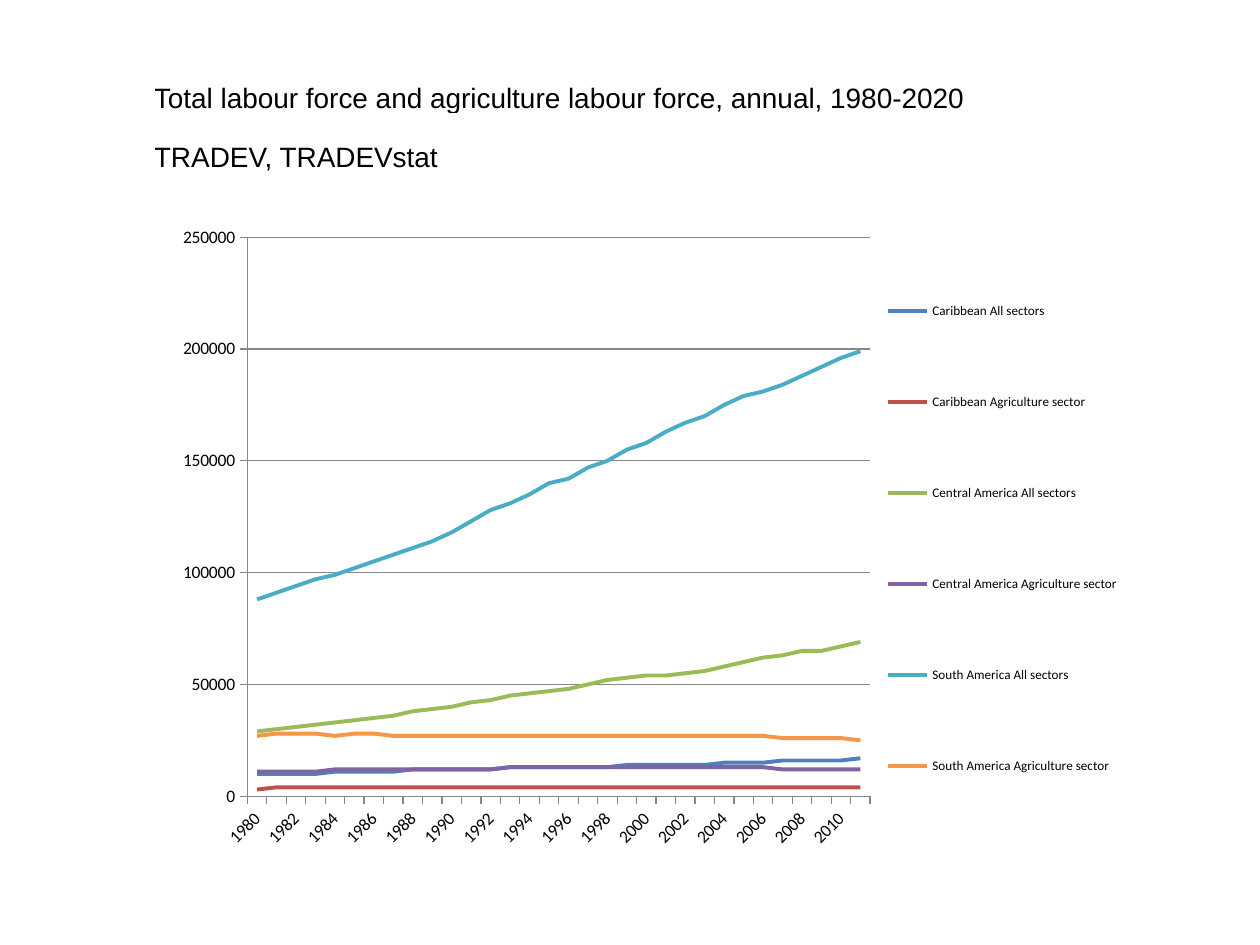
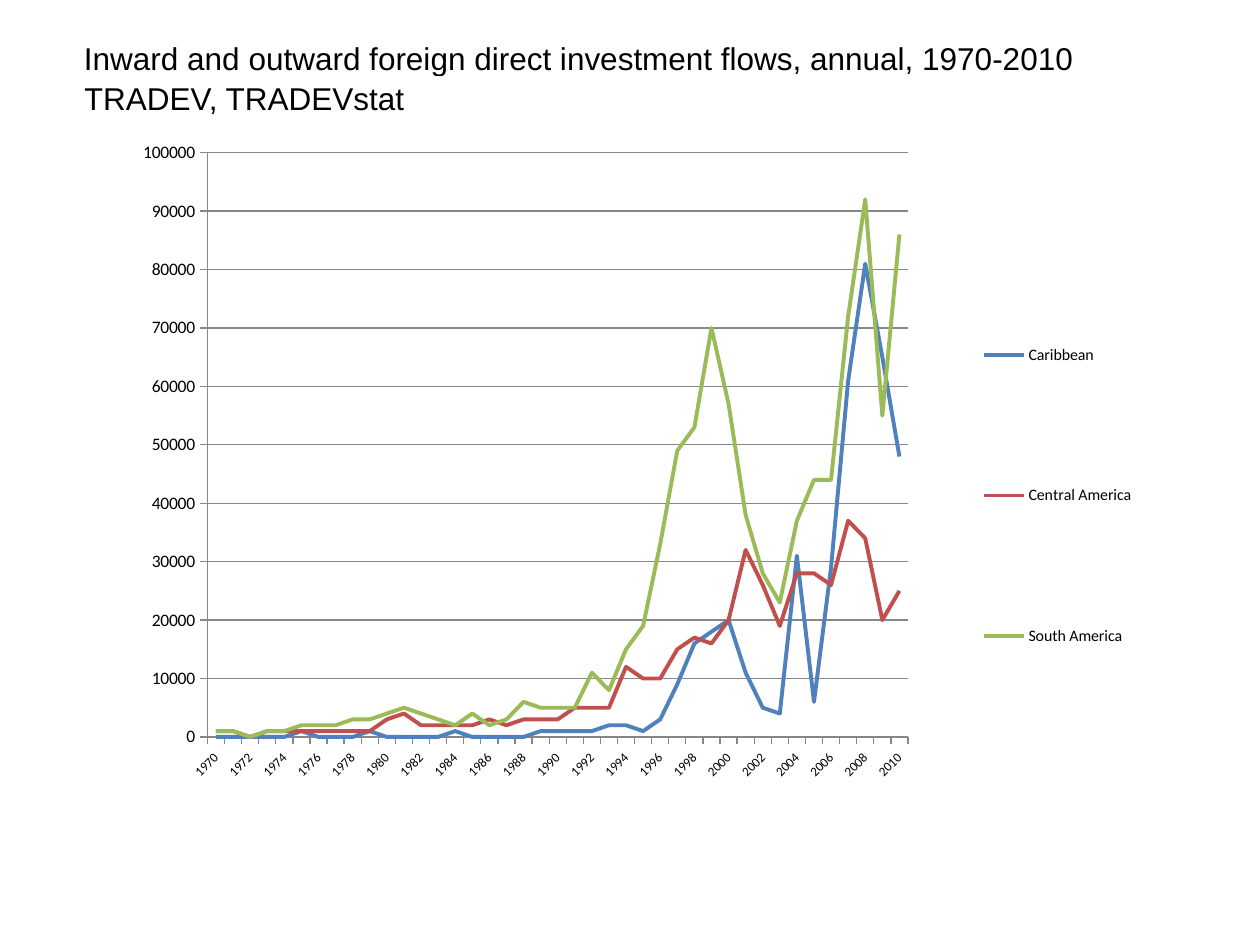
from dataclasses import dataclass

import lxml.etree
import pptx
import pptx.chart.data
import pptx.dml.color
import pptx.enum.chart
import pptx.enum.text
import pptx.oxml
import pptx.oxml.ns
import pptx.util

PX = 914400 / 126
BLANK_LAYOUT = 6
SOURCE_LINE = "TRADEV, TRADEVstat"


def rgb(code):
    return pptx.dml.color.RGBColor.from_string(code)


@dataclass(frozen=True)
class Theme:
    ink: str = "000000"
    rule: str = "878787"
    regions: tuple = ("4F81BD", "C0504D", "9BBB59", "8064A2", "4BACC6", "F79646")
    heading_font: str = "Arial"
    chart_font: str = "Calibri"
    axis_size: float = 10
    small_size: float = 7.5
    legend_size: float = 9.1
    labour_heading: float = 16
    investment_heading: float = 18
    trend_width: float = 2.25
    rule_width: float = 0.75


THEME = Theme()

LABOUR = {
    "Caribbean All sectors": [
        10, 10, 10, 10, 11, 11, 11, 11, 12, 12, 12, 12, 12, 13, 13, 13,
        13, 13, 13, 14, 14, 14, 14, 14, 15, 15, 15, 16, 16, 16, 16, 17],
    "Caribbean Agriculture sector": [3] + [4] * 31,
    "Central America All sectors": [
        29, 30, 31, 32, 33, 34, 35, 36, 38, 39, 40, 42, 43, 45, 46, 47,
        48, 50, 52, 53, 54, 54, 55, 56, 58, 60, 62, 63, 65, 65, 67, 69],
    "Central America Agriculture sector": [11] * 4 + [12] * 9 + [13] * 14 + [12] * 5,
    "South America All sectors": [
        88, 91, 94, 97, 99, 102, 105, 108, 111, 114, 118, 123, 128, 131, 135, 140,
        142, 147, 150, 155, 158, 163, 167, 170, 175, 179, 181, 184, 188, 192, 196, 199],
    "South America Agriculture sector":
        [27, 28, 28, 28, 27, 28, 28] + [27] * 20 + [26] * 4 + [25],
}

INVESTMENT = {
    "Caribbean": [
        0, 0, 0, 0, 0, 1, 0, 0, 0, 1, 0, 0, 0, 0, 1, 0, 0, 0, 0, 1, 1,
        1, 1, 2, 2, 1, 3, 9, 16, 18, 20, 11, 5, 4, 31, 6, 29, 61, 81, 65, 48],
    "Central America": [
        1, 1, 0, 1, 1, 1, 1, 1, 1, 1, 3, 4, 2, 2, 2, 2, 3, 2, 3, 3, 3,
        5, 5, 5, 12, 10, 10, 15, 17, 16, 20, 32, 26, 19, 28, 28, 26, 37, 34, 20, 25],
    "South America": [
        1, 1, 0, 1, 1, 2, 2, 2, 3, 3, 4, 5, 4, 3, 2, 4, 2, 3, 6, 5, 5,
        5, 11, 8, 15, 19, 33, 49, 53, 70, 57, 38, 28, 23, 37, 44, 44, 72, 92, 55, 86],
}


def px(length):
    return pptx.util.Emu(round(length * PX))


def style_font(font, size, family):
    font.size = pptx.util.Pt(size)
    font.name = family
    font.color.rgb = rgb(THEME.ink)


def style_rule(line):
    line.color.rgb = rgb(THEME.rule)
    line.width = pptx.util.Pt(THEME.rule_width)


def add_heading(slide, lines, left, top, widths, row_height, size):
    frame = slide.shapes.add_table(
        len(lines), len(widths), px(left), px(top),
        px(sum(widths)), px(row_height * len(lines)))
    heading = frame.table
    heading.first_row = heading.horz_banding = False
    for column, width in zip(heading.columns, widths):
        column.width = px(width)
    for row in heading.rows:
        row.height = px(row_height)
    for cell in heading.iter_cells():
        cell.fill.background()
        cell.margin_left = cell.margin_right = 0
        cell.margin_top = cell.margin_bottom = 0
        cell.vertical_anchor = pptx.enum.text.MSO_ANCHOR.BOTTOM
    heading.cell(0, 0).merge(heading.cell(0, len(widths) - 1))
    for row, line in enumerate(lines):
        wording = heading.cell(row, 0).text_frame.paragraphs[0].add_run()
        wording.text = line
        style_font(wording.font, size, THEME.heading_font)


def make_layout(area, chart_box, inner=False):
    left, top, width, height = chart_box
    layout = pptx.oxml.parse_xml(
        f"<c:layout {pptx.oxml.ns.nsdecls('c')}><c:manualLayout/></c:layout>")
    settings = {"layoutTarget": "inner"} if inner else {}
    settings |= {
        "xMode": "edge", "yMode": "edge",
        "x": round((area[0] - left) / width, 3),
        "y": round((area[1] - top) / height, 3),
        "w": round(area[2] / width, 3),
        "h": round(area[3] / height, 3),
    }
    for tag, value in settings.items():
        lxml.etree.SubElement(layout[0], pptx.oxml.ns.qn(f"c:{tag}")).set("val", str(value))
    return layout


def drop_layout(parent):
    for layout in parent.findall(pptx.oxml.ns.qn("c:layout")):
        parent.remove(layout)


def style_year_axis(axis, size):
    style_font(axis.tick_labels.font, size, THEME.chart_font)
    style_rule(axis.format.line)
    axis.major_tick_mark = pptx.enum.chart.XL_TICK_MARK.OUTSIDE
    axis.has_major_gridlines = False
    qn = pptx.oxml.ns.qn
    element = axis._element
    element.find(f"{qn('c:txPr')}/{qn('a:bodyPr')}").set("rot", "-2700000")
    skip = pptx.oxml.parse_xml(
        f'<c:tickLblSkip {pptx.oxml.ns.nsdecls("c")} val="2"/>')
    element.find(qn("c:noMultiLvlLbl")).addprevious(skip)


def style_value_axis(axis, maximum, step):
    axis.minimum_scale = 0
    axis.maximum_scale = maximum
    axis.major_unit = step
    axis.major_tick_mark = pptx.enum.chart.XL_TICK_MARK.OUTSIDE
    axis.has_major_gridlines = True
    style_rule(axis.major_gridlines.format.line)
    style_rule(axis.format.line)
    style_font(axis.tick_labels.font, THEME.axis_size, THEME.chart_font)
    axis.tick_labels.number_format = "0"
    axis.tick_labels.number_format_is_linked = False


def add_trends(slide, box, plot_area, legend_area, first_year, thousands,
               maximum, step, year_size, legend_size):
    data = pptx.chart.data.CategoryChartData()
    year_count = len(next(iter(thousands.values())))
    data.categories = [str(first_year + offset) for offset in range(year_count)]
    for region, values in thousands.items():
        data.add_series(region, [value * 1000 for value in values])
    chart = slide.shapes.add_chart(
        pptx.enum.chart.XL_CHART_TYPE.LINE, *map(px, box), data).chart
    chart.has_title = False
    style_font(chart.font, THEME.axis_size, THEME.chart_font)

    trends = chart.plots[0]
    trends.vary_by_categories = False
    for trend, color in zip(trends.series, THEME.regions):
        trend.smooth = False
        trend.format.line.color.rgb = rgb(color)
        trend.format.line.width = pptx.util.Pt(THEME.trend_width)
    style_year_axis(chart.category_axis, year_size)
    style_value_axis(chart.value_axis, maximum, step)

    chart.has_legend = True
    legend = chart.legend
    legend.position = pptx.enum.chart.XL_LEGEND_POSITION.RIGHT
    legend.include_in_layout = False
    style_font(legend.font, legend_size, THEME.chart_font)
    drop_layout(legend._element)
    legend._element.find(pptx.oxml.ns.qn("c:legendPos")).addnext(
        make_layout(legend_area, box))
    plot = chart._chartSpace.chart.plotArea
    drop_layout(plot)
    plot.insert(0, make_layout(plot_area, box, inner=True))


def build_labour_slide(slide):
    add_trends(
        slide, box=(164, 214, 992, 645), plot_area=(247, 237, 623, 559),
        legend_area=(868, 229, 268, 620), first_year=1980, thousands=LABOUR,
        maximum=250000, step=50000,
        year_size=THEME.axis_size, legend_size=THEME.small_size)
    add_heading(
        slide,
        ["Total labour force and agriculture labour force, annual, 1980-2020",
         SOURCE_LINE],
        154, 55, [349] + [126] * 4, 59, THEME.labour_heading)


def build_investment_slide(slide):
    add_trends(
        slide, box=(64, 116, 1121, 735), plot_area=(208, 153, 701, 584),
        legend_area=(963, 223, 190, 545), first_year=1970, thousands=INVESTMENT,
        maximum=100000, step=10000,
        year_size=THEME.small_size, legend_size=THEME.legend_size)
    add_heading(
        slide,
        ["Inward and outward foreign direct investment flows, annual, 1970-2010",
         SOURCE_LINE],
        84, 37, [416] + [151] * 4, 40, THEME.investment_heading)


def main():
    deck = pptx.Presentation()
    deck.slide_width = px(1260)
    deck.slide_height = px(945)
    for build in (build_labour_slide, build_investment_slide):
        build(deck.slides.add_slide(deck.slide_layouts[BLANK_LAYOUT]))
    deck.save("out.pptx")


if __name__ == "__main__":
    main()
